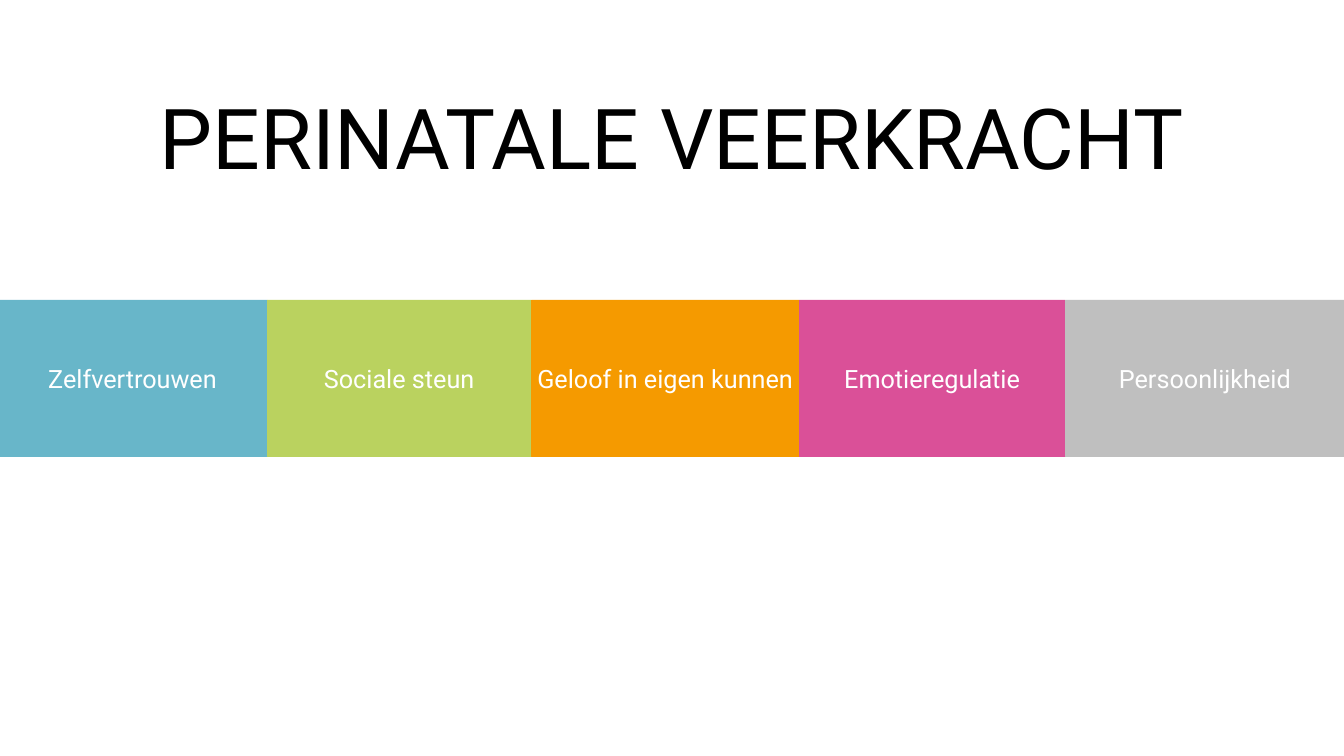
"""Build the slide on perinatal resilience: a title above a band of five factors."""
from pptx import Presentation
from pptx.dml.color import RGBColor as RGB
from pptx.enum.shapes import MSO_SHAPE as SHAPE
from pptx.enum.text import MSO_ANCHOR as ANCHOR, PP_ALIGN as ALIGN
from pptx.util import Inches, Pt

COLORS = {
    "blue": "68B6C9",
    "green": "BAD25F",
    "orange": "F59A00",
    "pink": "DA5098",
    "grey": "BFBFBF",
    "white": "FFFFFF",
    "black": "000000",
}
FACTORS = [
    ("Zelfvertrouwen", "blue"),
    ("Sociale steun", "green"),
    ("Geloof in eigen kunnen", "orange"),
    ("Emotieregulatie", "pink"),
    ("Persoonlijkheid", "grey"),
]
EDGES = [-0.15, 19.88, 39.53, 59.45, 79.26, 100.04]
BAND_TOP, BAND_HEIGHT = 39.67, 20.67
TITLE_TOP, TITLE_HEIGHT = 11, 14.13

prs = Presentation()
prs.slide_width, prs.slide_height = Inches(26.66), Inches(15)
s = prs.slides.add_slide(prs.slide_layouts[6])
col, row = prs.slide_width / 100, prs.slide_height / 100


def box(left, top, width, height):
    """Turn percentages of the slide into lengths."""
    return [round(v) for v in (left * col, top * row, width * col, height * row)]


def write(tf, text, size, color):
    """Put one centred line of text in a frame."""
    tf.word_wrap = True
    p = tf.paragraphs[0]
    p.alignment = ALIGN.CENTER
    r = p.add_run()
    r.text = text
    for name, value in {"name": "Roboto", "size": Pt(size)}.items():
        setattr(r.font, name, value)
    r.font.color.rgb = RGB.from_string(COLORS[color])


for (label, color), left, right in zip(FACTORS, EDGES, EDGES[1:]):
    sp = s.shapes.add_shape(SHAPE.RECTANGLE, *box(left, BAND_TOP, right - left, BAND_HEIGHT))
    sp.shadow.inherit = False
    sp.fill.solid()
    sp.fill.fore_color.rgb = sp.line.color.rgb = RGB.from_string(COLORS[color])
    sp.line.width = Pt(1)
    tf = sp.text_frame
    margin = Inches(0.05)
    for name, value in {"vertical_anchor": ANCHOR.MIDDLE, "margin_left": margin, "margin_right": margin}.items():
        setattr(tf, name, value)
    write(tf, label, 36, "white")

title = s.shapes.add_textbox(*box(0, TITLE_TOP, 100, TITLE_HEIGHT))
write(title.text_frame, "PERINATALE VEERKRACHT", 120, "black")

prs.save("out.pptx")
